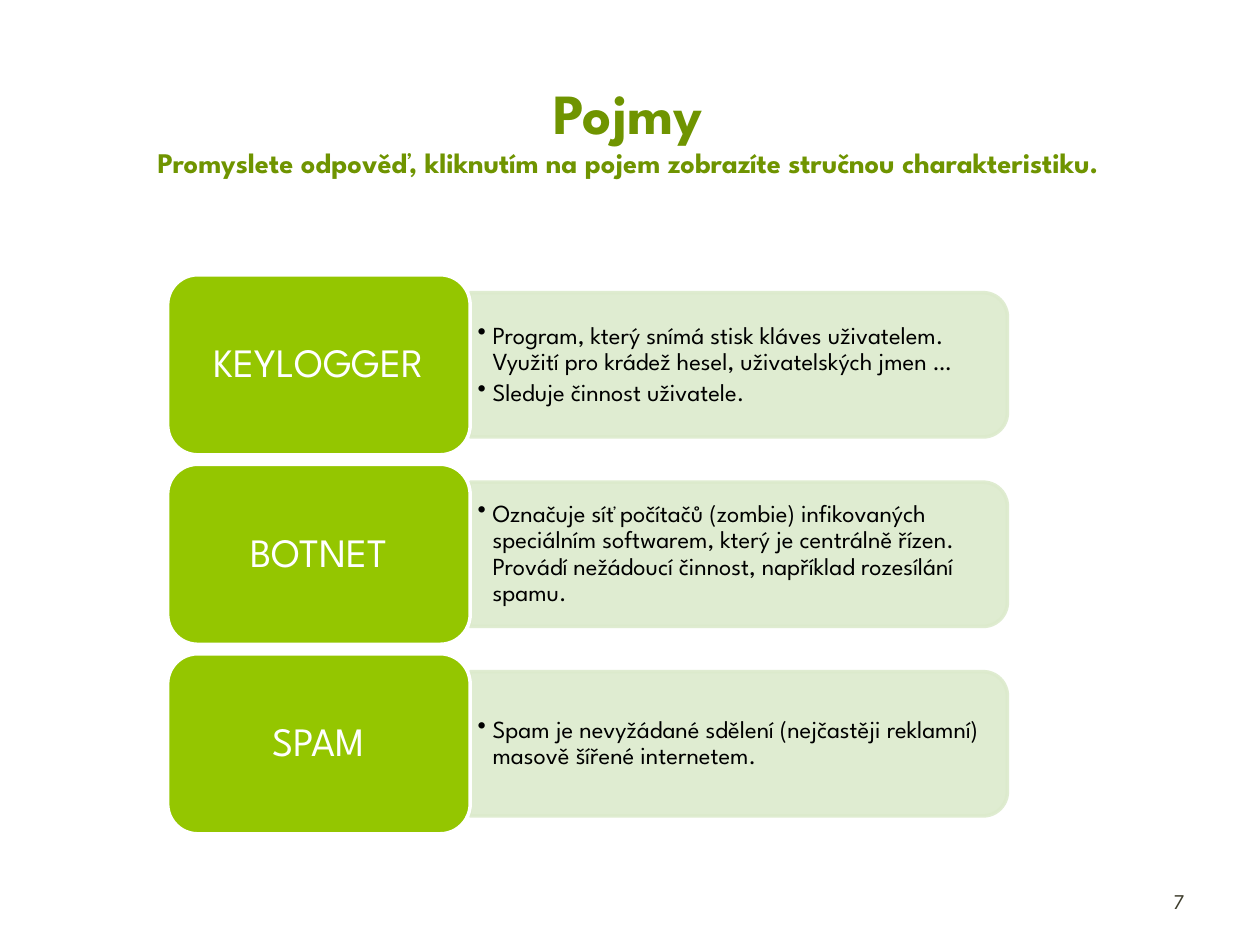
import math

from lxml import etree
from pptx import Presentation
from pptx.dml.color import RGBColor
from pptx.enum.shapes import MSO_SHAPE
from pptx.enum.text import MSO_ANCHOR, PP_ALIGN
from pptx.oxml.ns import qn
from pptx.util import Cm, Pt

ROUNDED = MSO_SHAPE.ROUNDED_RECTANGLE
MIDDLE = MSO_ANCHOR.MIDDLE
LEFT, CENTER, RIGHT = PP_ALIGN.LEFT, PP_ALIGN.CENTER, PP_ALIGN.RIGHT

FONT = "League Spartan"
COLORS = {
    "heading": "6F9400",
    "term": "94C600",
    "panel": "DCEACC",
    "white": "FFFFFF",
    "body": "000000",
    "number": "3E3D2D",
}

TERM_LEFT, TERM_WIDTH, TERM_HEIGHT = 3.38, 6.1, 3.63
PANEL_WIDTH, PANEL_HEIGHT, PANEL_RADIUS = 10.83, 2.91, 0.49
FIRST_TOP, ROW_PITCH = 5.54, 3.82
ARC_STEPS = 12

GLOSSARY = [
    ("KEYLOGGER", [
        "Program, který snímá stisk kláves uživatelem. "
        "Využití pro krádež hesel, uživatelských jmen …",
        "Sleduje činnost uživatele.",
    ]),
    ("BOTNET", [
        "Označuje síť počítačů (zombie) infikovaných speciálním softwarem, "
        "který je centrálně řízen. Provádí nežádoucí činnost, například "
        "rozesílání spamu.",
    ]),
    ("SPAM", [
        "Spam je nevyžádané sdělení (nejčastěji reklamní) "
        "masově šířené internetem.",
    ]),
]


def rgb(name):
    return RGBColor.from_string(COLORS[name])


def add_text(paragraph, text, *, size, color, bold=False, align=LEFT,
             spacing=None, after=0):
    paragraph.alignment = align
    paragraph.space_after = Pt(after)
    if spacing:
        paragraph.line_spacing = spacing
    run = paragraph.add_run()
    run.text = text
    run.font.name = FONT
    run.font.size = Pt(size)
    run.font.bold = bold
    run.font.color.rgb = rgb(color)


def set_frame(shape, margins=(0.25, 0.13, 0.25, 0.13)):
    frame = shape.text_frame
    frame.word_wrap = True
    frame.vertical_anchor = MIDDLE
    (frame.margin_left, frame.margin_top,
     frame.margin_right, frame.margin_bottom) = map(Cm, margins)
    return frame


def paint(shape, fill, line, opacity=100):
    shape.shadow.inherit = False
    shape.fill.solid()
    shape.fill.fore_color.rgb = rgb(fill)
    shape.line.color.rgb = rgb(line)
    shape.line.width = Pt(2)
    if opacity < 100:
        for color in shape.element.spPr.iter(qn("a:srgbClr")):
            etree.SubElement(color, qn("a:alpha"), val=str(opacity * 1000))


def add_bullet(paragraph):
    properties = paragraph._p.get_or_add_pPr()
    properties.set("marL", str(Cm(0.3)))
    properties.set("indent", str(-Cm(0.3)))
    etree.SubElement(properties, qn("a:buChar"), char="•")


def add_text_box(slide, left, top, width, height):
    box = slide.shapes.add_textbox(Cm(left), Cm(top), Cm(width), Cm(height))
    return set_frame(box).paragraphs[0]


def add_panel(slide, left, top, definitions):
    right, bottom = left + PANEL_WIDTH, top + PANEL_HEIGHT
    center_x = right - PANEL_RADIUS
    corners = [(top + PANEL_RADIUS, -90), (bottom - PANEL_RADIUS, 0)]
    outline = []
    for center_y, start in corners:
        for step in range(ARC_STEPS + 1):
            angle = math.radians(start + 90 * step / ARC_STEPS)
            outline.append((Cm(center_x + PANEL_RADIUS * math.cos(angle)),
                            Cm(center_y + PANEL_RADIUS * math.sin(angle))))
    outline.append((Cm(left), Cm(bottom)))
    builder = slide.shapes.build_freeform(Cm(left), Cm(top))
    builder.add_line_segments(outline, close=True)
    panel = builder.convert_to_shape()
    paint(panel, "panel", "panel", opacity=90)
    frame = set_frame(panel, (0.15, 0.23, 0.28, 0.23))
    for index, definition in enumerate(definitions):
        paragraph = frame.add_paragraph() if index else frame.paragraphs[0]
        add_text(paragraph, definition, size=14, color="body",
                 spacing=0.9, after=2.1)
        add_bullet(paragraph)


def add_term(slide, top, term):
    card = slide.shapes.add_shape(ROUNDED, Cm(TERM_LEFT), Cm(top),
                                  Cm(TERM_WIDTH), Cm(TERM_HEIGHT))
    paint(card, "term", "white")
    add_text(set_frame(card).paragraphs[0], term, size=23, color="white",
             align=CENTER, spacing=0.9)


def main():
    deck = Presentation()
    deck.slide_width, deck.slide_height = Cm(25.4), Cm(19.05)
    slide = deck.slides.add_slide(deck.slide_layouts[6])

    heading = add_text_box(slide, 1.19, 1.14, 22.94, 2.9)
    style = {"color": "heading", "bold": True, "align": CENTER, "after": 12}
    add_text(heading, "Pojmy", size=32.4, **style)
    heading.add_line_break()
    add_text(heading, "Promyslete odpověď, kliknutím na pojem zobrazíte "
             "stručnou charakteristiku.", size=16.2, **style)

    page_number = add_text_box(slide, 18.21, 17.65, 5.92, 1.02)
    add_text(page_number, "7", size=12, color="number", align=RIGHT)

    for row, (term, definitions) in enumerate(GLOSSARY):
        top = FIRST_TOP + row * ROW_PITCH
        panel_top = top + (TERM_HEIGHT - PANEL_HEIGHT) / 2
        add_panel(slide, TERM_LEFT + TERM_WIDTH, panel_top, definitions)
        add_term(slide, top, term)

    deck.save("out.pptx")


if __name__ == "__main__":
    main()
